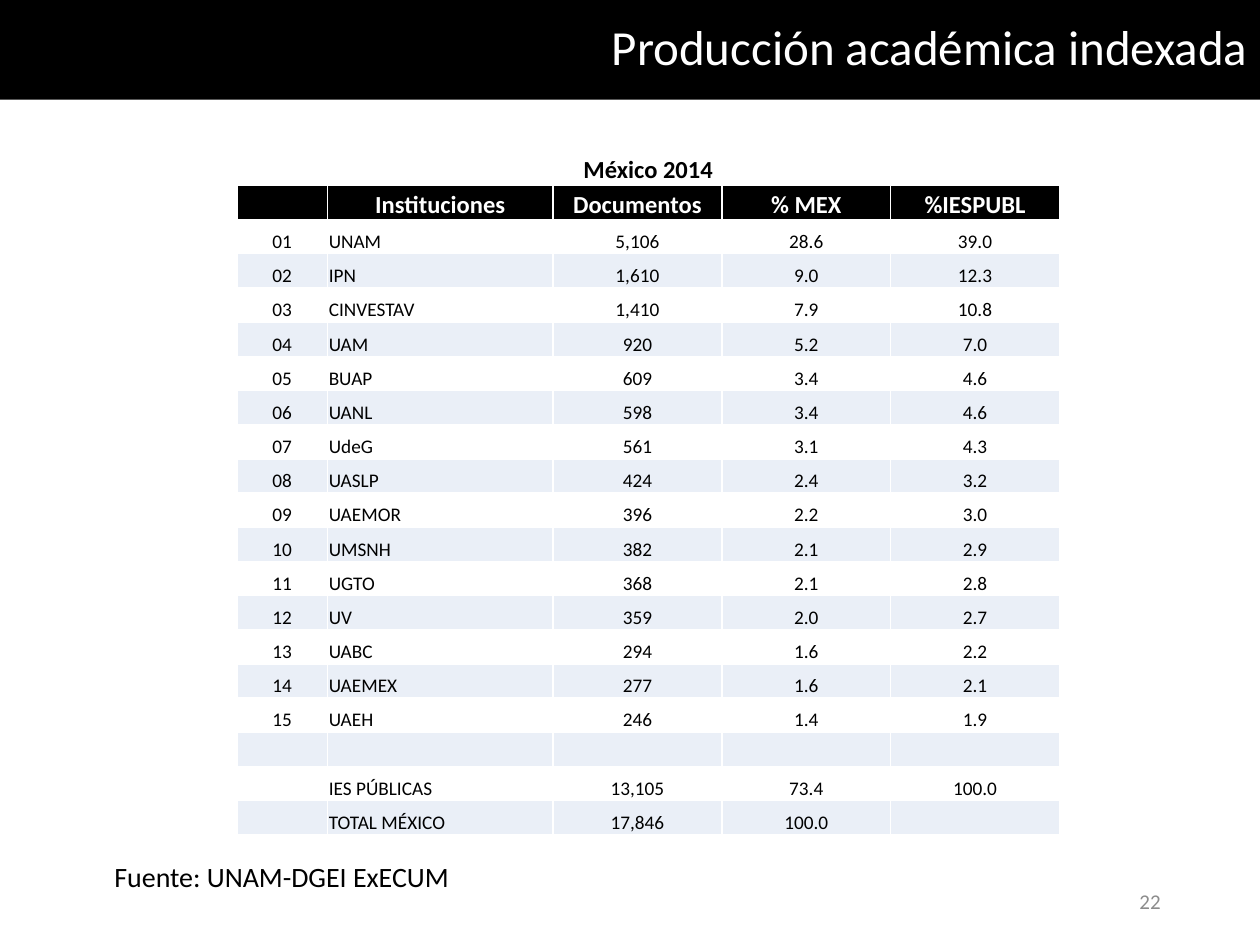
import lxml.etree
import pptx
import pptx.dml.color
import pptx.enum.text
import pptx.oxml.ns
import pptx.util

Inches = pptx.util.Inches
Align = pptx.enum.text.PP_ALIGN
Anchor = pptx.enum.text.MSO_ANCHOR
RGBColor = pptx.dml.color.RGBColor
qn = pptx.oxml.ns.qn

BLACK = RGBColor(0x00, 0x00, 0x00)
WHITE = RGBColor(0xFF, 0xFF, 0xFF)
BAND = RGBColor(0xEA, 0xEF, 0xF7)
GRAY = RGBColor(0x8C, 0x8C, 0x8C)
FONT = "Calibri"

TABLE_BOX = (1.88, 1.2, 6.53, 5.43)
COLUMN_WIDTHS = (0.72, 1.79, 1.34, 1.34, 1.34)
CAPTION = "México 2014"
HEADINGS = ("", "Instituciones", "Documentos", "% MEX", "%IESPUBL")
INSTITUTIONS = [
    ("UNAM", "5,106", "28.6", "39.0"),
    ("IPN", "1,610", "9.0", "12.3"),
    ("CINVESTAV", "1,410", "7.9", "10.8"),
    ("UAM", "920", "5.2", "7.0"),
    ("BUAP", "609", "3.4", "4.6"),
    ("UANL", "598", "3.4", "4.6"),
    ("UdeG", "561", "3.1", "4.3"),
    ("UASLP", "424", "2.4", "3.2"),
    ("UAEMOR", "396", "2.2", "3.0"),
    ("UMSNH", "382", "2.1", "2.9"),
    ("UGTO", "368", "2.1", "2.8"),
    ("UV", "359", "2.0", "2.7"),
    ("UABC", "294", "1.6", "2.2"),
    ("UAEMEX", "277", "1.6", "2.1"),
    ("UAEH", "246", "1.4", "1.9"),
]
TOTALS = [
    ("",) * 5,
    ("", "IES PÚBLICAS", "13,105", "73.4", "100.0"),
    ("", "TOTAL MÉXICO", "17,846", "100.0", ""),
]


def write(text_frame, text, size, color, alignment, bold=False):
    paragraph = text_frame.paragraphs[0]
    paragraph.alignment = alignment
    run = paragraph.add_run()
    run.text = text
    run.font.name = FONT
    run.font.size = pptx.util.Pt(size)
    run.font.bold = bold
    run.font.color.rgb = color
    return paragraph


def add_title(slide, text):
    title = slide.shapes.title
    title.left, title.top, title.width, title.height = map(Inches, (0, 0, 10, 0.79))
    title.fill.solid()
    title.fill.fore_color.rgb = BLACK
    title.text_frame.auto_size = pptx.enum.text.MSO_AUTO_SIZE.NONE
    title.text_frame.vertical_anchor = Anchor.MIDDLE
    write(title.text_frame, text, 28, WHITE, Align.RIGHT).line_spacing = 0.9


def add_text(slide, box, text, size, color, alignment, anchor, wrap):
    frame = slide.shapes.add_textbox(*map(Inches, box)).text_frame
    frame.word_wrap = wrap
    frame.vertical_anchor = anchor
    write(frame, text, size, color, alignment)


def add_borders(cell):
    properties = cell._tc.get_or_add_tcPr()
    for side in ("a:lnL", "a:lnR", "a:lnT", "a:lnB"):
        line = lxml.etree.SubElement(properties, qn(side), w=str(pptx.util.Pt(1)))
        fill = lxml.etree.SubElement(line, qn("a:solidFill"))
        lxml.etree.SubElement(fill, qn("a:srgbClr"), val=str(WHITE))


def fill_cell(cell, text, size, color, background, alignment, bold):
    add_borders(cell)
    cell.fill.solid()
    cell.fill.fore_color.rgb = background
    cell.vertical_anchor = Anchor.BOTTOM
    cell.margin_left = cell.margin_right = cell.margin_top = Inches(0.01)
    cell.margin_bottom = 0
    if text:
        write(cell.text_frame, text, size, color, alignment, bold)
    else:
        # Keep an empty cell from stretching its row
        paragraph = cell.text_frame.paragraphs[0]._p
        lxml.etree.SubElement(paragraph, qn("a:endParaRPr"), sz=str(size * 100))


def add_table(slide):
    ranked = [(f"{rank:02d}", *row) for rank, row in enumerate(INSTITUTIONS, 1)]
    rows = [(CAPTION, "", "", "", ""), HEADINGS] + ranked + TOTALS
    table = slide.shapes.add_table(
        len(rows), len(COLUMN_WIDTHS), *map(Inches, TABLE_BOX)).table
    for column, width in zip(table.columns, COLUMN_WIDTHS):
        column.width = Inches(width)
    for row in table.rows:
        row.height = Inches(TABLE_BOX[3] / len(rows))

    for row_index, values in enumerate(rows):
        is_header = row_index < 2
        is_heading = row_index == 1
        band = BAND if row_index % 2 else WHITE
        for column_index, text in enumerate(values):
            is_name = column_index == 1 and not is_header
            fill_cell(
                table.cell(row_index, column_index), text,
                size=14 if is_header else 11,
                color=WHITE if is_heading else BLACK,
                background=BLACK if is_heading else band,
                alignment=Align.LEFT if is_name else Align.CENTER,
                bold=is_header)
    table.cell(0, 0).merge(table.cell(0, len(COLUMN_WIDTHS) - 1))


def main():
    presentation = pptx.Presentation()
    presentation.slide_width = Inches(10)
    presentation.slide_height = Inches(7.5)
    slide = presentation.slides.add_slide(presentation.slide_layouts[5])

    # Title band and page number
    add_title(slide, "Producción académica indexada")
    add_text(slide, (7.06, 6.95, 2.25, 0.4), "22", 12, GRAY,
             Align.RIGHT, Anchor.MIDDLE, True)

    # Ranking and its source
    add_table(slide)
    add_text(slide, (0.81, 6.77, 2.89, 0.37), "Fuente: UNAM-DGEI ExECUM", 16, BLACK,
             Align.LEFT, Anchor.TOP, False)

    presentation.save("out.pptx")


if __name__ == "__main__":
    main()
